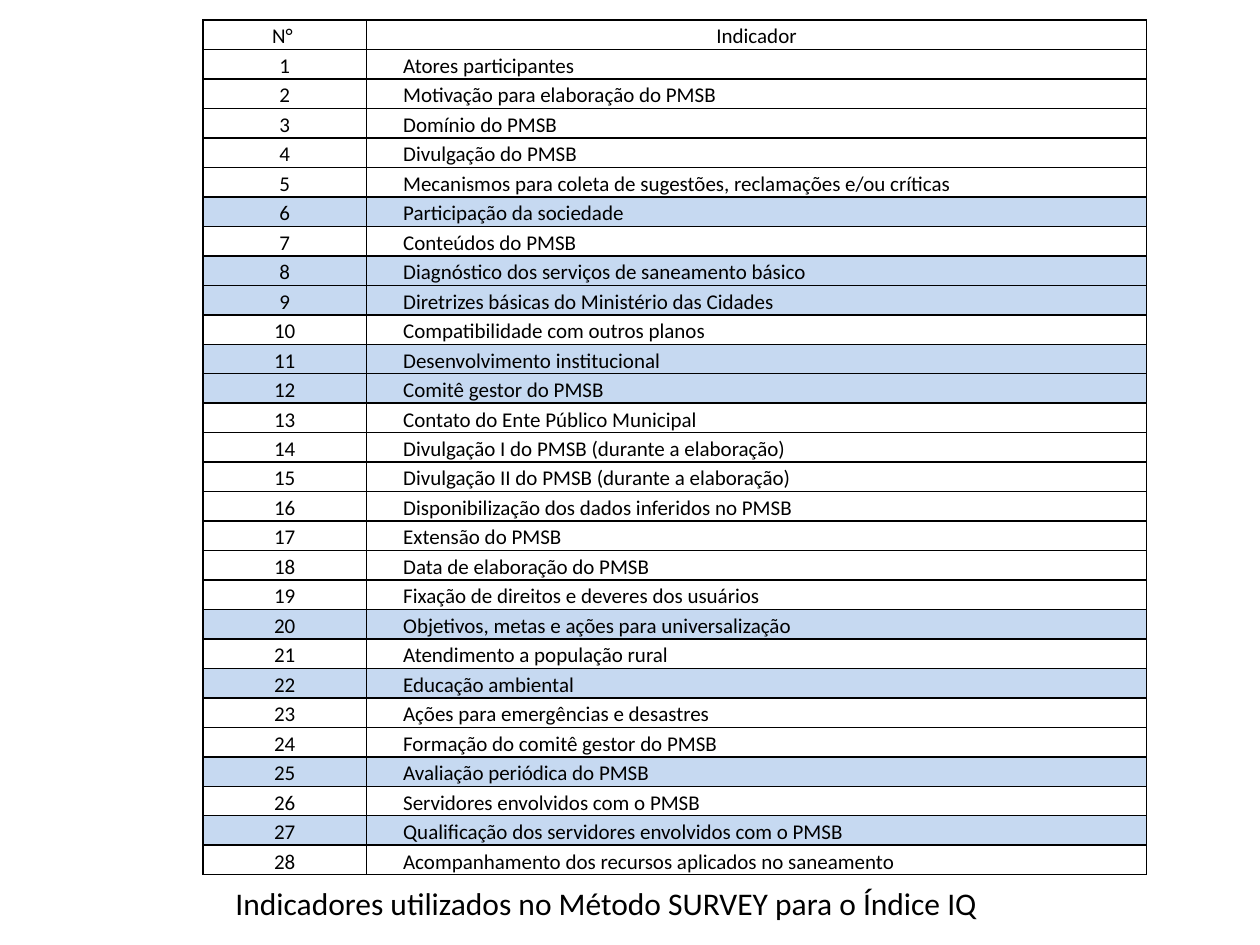
from lxml.etree import SubElement
from pptx import Presentation
from pptx.dml.color import RGBColor
from pptx.enum.text import MSO_ANCHOR as Anchor, MSO_AUTO_SIZE as AutoSize, PP_ALIGN as Align
from pptx.oxml.ns import qn
from pptx.util import Inches, Pt

HEADINGS = ("N° ", "Indicador")
INDICATORS = [
    "Atores participantes",
    "Motivação para elaboração do PMSB",
    "Domínio do PMSB",
    "Divulgação do PMSB",
    "Mecanismos para coleta de sugestões, reclamações e/ou críticas",
    "Participação da sociedade",
    "Conteúdos do PMSB",
    "Diagnóstico dos serviços de saneamento básico",
    "Diretrizes básicas do Ministério das Cidades",
    "Compatibilidade com outros planos",
    "Desenvolvimento institucional",
    "Comitê gestor do PMSB",
    "Contato do Ente Público Municipal",
    "Divulgação I do PMSB (durante a elaboração)",
    "Divulgação II do PMSB (durante a elaboração)",
    "Disponibilização dos dados inferidos no PMSB",
    "Extensão do PMSB",
    "Data de elaboração do PMSB",
    "Fixação de direitos e deveres dos usuários",
    "Objetivos, metas e ações para universalização",
    "Atendimento a população rural",
    "Educação ambiental",
    "Ações para emergências e desastres",
    "Formação do comitê gestor do PMSB",
    "Avaliação periódica do PMSB",
    "Servidores envolvidos com o PMSB",
    "Qualificação dos servidores envolvidos com o PMSB",
    "Acompanhamento dos recursos aplicados no saneamento",
]
HIGHLIGHTED = {6, 8, 9, 11, 12, 20, 22, 25, 27}
CAPTION = "Indicadores utilizados no Método SURVEY para o Índice IQ"

COLORS = {"ink": "000000", "highlight": "C6D9F1"}
COLUMN_WIDTHS = (1.3, 6.19)
ROW_HEIGHT = 0.23
INDENT = Inches(0.22)
CELL_FORMAT = {
    "vertical_anchor": Anchor.MIDDLE,
    "margin_left": Inches(0.07),
    "margin_right": Inches(0.07),
    "margin_top": 0,
    "margin_bottom": 0,
}
TABLE_FORMAT = {"first_row": False, "horz_banding": False}
CAPTION_FORMAT = {"word_wrap": True, "auto_size": AutoSize.SHAPE_TO_FIT_TEXT}


def apply_format(target, values):
    for name, value in values.items():
        setattr(target, name, value)


def write(paragraph, words, size):
    run = paragraph.add_run()
    run.text = words
    apply_format(run.font, {"name": "Calibri", "size": Pt(size), "bold": False})
    run.font.color.rgb = RGBColor.from_string(COLORS["ink"])


def add_borders(cell):
    properties = cell._tc.get_or_add_tcPr()
    for position, side in enumerate(("lnL", "lnR", "lnT", "lnB")):
        line = properties.makeelement(qn(f"a:{side}"), {"w": str(Pt(1))})
        fill = SubElement(line, qn("a:solidFill"))
        SubElement(fill, qn("a:srgbClr"), val=COLORS["ink"])
        properties.insert(position, line)


def fill_cell(cell, words, centred, highlighted):
    apply_format(cell, CELL_FORMAT)
    paragraph = cell.text_frame.paragraphs[0]
    paragraph.line_spacing = 1.15
    paragraph.alignment = Align.CENTER if centred else Align.LEFT
    if not centred:
        paragraph._p.get_or_add_pPr().set("marL", str(INDENT))
    write(paragraph, words, 12)
    if highlighted:
        cell.fill.solid()
        cell.fill.fore_color.rgb = RGBColor.from_string(COLORS["highlight"])
    else:
        cell.fill.background()
    add_borders(cell)


def add_indicator_table(slide):
    rows = [HEADINGS] + [(str(n), name) for n, name in enumerate(INDICATORS, 1)]
    table = slide.shapes.add_table(
        len(rows), len(HEADINGS), Inches(1.61), Inches(0.16),
        Inches(sum(COLUMN_WIDTHS)), Inches(ROW_HEIGHT * len(rows)),
    ).table
    apply_format(table, TABLE_FORMAT)
    for column, width in zip(table.columns, COLUMN_WIDTHS):
        column.width = Inches(width)
    for number, row in enumerate(rows):
        table.rows[number].height = Inches(ROW_HEIGHT)
        for column, words in enumerate(row):
            centred = number == 0 or column == 0
            fill_cell(table.cell(number, column), words, centred, number in HIGHLIGHTED)


def add_caption(slide):
    caption = slide.shapes.add_textbox(Inches(1.77), Inches(6.97), Inches(6.69), Inches(0.4))
    apply_format(caption.text_frame, CAPTION_FORMAT)
    write(caption.text_frame.paragraphs[0], CAPTION, 18)


def main():
    deck = Presentation()
    apply_format(deck, {"slide_width": Inches(10), "slide_height": Inches(7.5)})
    slide = deck.slides.add_slide(deck.slide_layouts[6])
    add_indicator_table(slide)
    add_caption(slide)
    deck.save("out.pptx")


if __name__ == "__main__":
    main()
